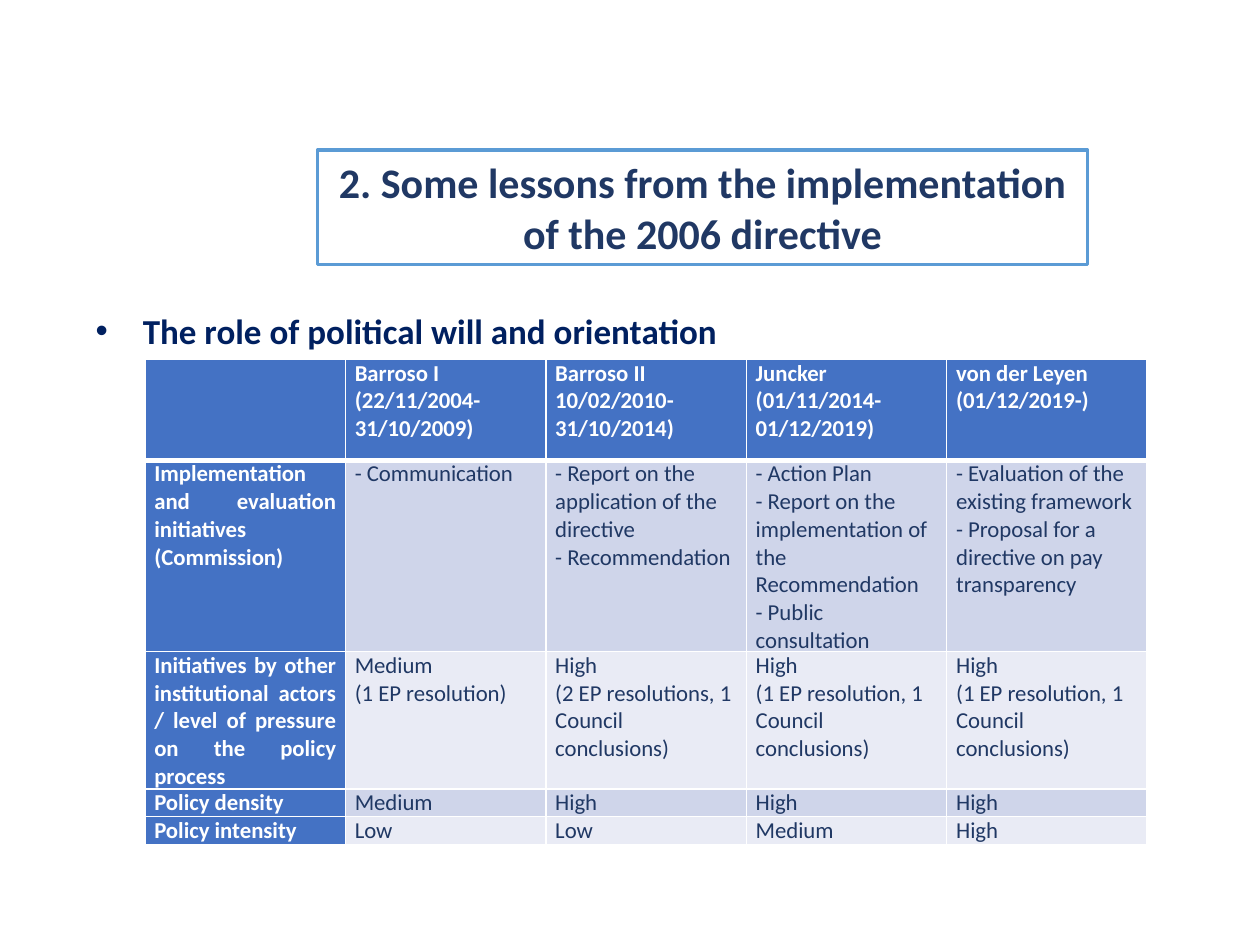
from lxml import etree
from pptx import Presentation
from pptx.dml.color import RGBColor
from pptx.enum.shapes import MSO_SHAPE
from pptx.enum.text import MSO_ANCHOR, PP_ALIGN
from pptx.oxml.ns import qn
from pptx.util import Pt

WHITE = RGBColor(0xFF, 0xFF, 0xFF)
NAVY = RGBColor(0x00, 0x20, 0x60)
INK = RGBColor(0x20, 0x38, 0x64)
FRAME = RGBColor(0x5B, 0x9B, 0xD5)
HEADING = RGBColor(0x44, 0x72, 0xC4)
BANDS = (RGBColor(0xCF, 0xD5, 0xEA), RGBColor(0xE9, 0xEB, 0xF5))

COMMISSIONS = [
    "",
    "Barroso I\n(22/11/2004-31/10/2009)",
    "Barroso II\n10/02/2010-31/10/2014)",
    "Juncker\n(01/11/2014-01/12/2019)",
    "von der Leyen\n(01/12/2019-)",
]
ONE_RESOLUTION = "High\n(1 EP resolution, 1 Council conclusions)"
ROWS = [
    COMMISSIONS,
    ["Implementation and evaluation initiatives (Commission)",
     "- Communication",
     "- Report on the application of the directive\n- Recommendation",
     "- Action Plan\n- Report on the implementation of the Recommendation\n"
     "- Public consultation",
     "- Evaluation of the existing framework\n"
     "- Proposal for a directive on pay transparency"],
    ["Initiatives by other institutional actors / level of pressure "
     "on the policy process",
     "Medium\n(1 EP resolution)",
     "High\n(2 EP resolutions, 1 Council conclusions)",
     ONE_RESOLUTION, ONE_RESOLUTION],
    ["Policy density", "Medium", "High", "High", "High"],
    ["Policy intensity", "Low", "Low", "Medium", "High"],
]
ROW_HEIGHTS = (57.6, 109.4, 78.5, 15.84, 15.84)
COLUMN_WIDTH = 114.55


class Deck:
    """Holds the text style and the slide being filled."""

    font_name = "Calibri"

    def __init__(self, slide):
        self.slide = slide

    def style(self, frame, size, color, bold, align=PP_ALIGN.LEFT):
        for paragraph in frame.paragraphs:
            paragraph.alignment = align
            font = paragraph.font
            font.name, font.size, font.bold = self.font_name, Pt(size), bold
            font.color.rgb = color

    def framed_title(self, text, left, top, width, height):
        title = self.slide.shapes.add_shape(
            MSO_SHAPE.RECTANGLE, Pt(left), Pt(top), Pt(width), Pt(height))
        title.shadow.inherit = False
        title.fill.background()
        title.line.color.rgb = FRAME
        title.line.width = Pt(2)
        frame = title.text_frame
        frame.word_wrap = True
        frame.vertical_anchor = MSO_ANCHOR.MIDDLE
        frame.text = text
        self.style(frame, 24, INK, True, PP_ALIGN.CENTER)

    def bullet(self, text, left, top, width, height, indent=27):
        frame = self.slide.shapes.add_textbox(
            Pt(left), Pt(top), Pt(width), Pt(height)).text_frame
        frame.word_wrap = True
        frame.margin_top = frame.margin_bottom = 0
        frame.text = text
        properties = frame.paragraphs[0]._p.get_or_add_pPr()
        properties.set("marL", str(Pt(indent)))
        properties.set("indent", str(-Pt(indent)))
        etree.SubElement(properties, qn("a:buFont"), typeface="Arial")
        etree.SubElement(properties, qn("a:buChar"), char="•")
        self.style(frame, 20, NAVY, True)

    def borders(self, cell, **widths):
        properties = cell._tc.get_or_add_tcPr()
        for place, side in enumerate("LRTB"):
            line = etree.Element(qn(f"a:ln{side}"),
                                 w=str(Pt(widths.get(side, 1))))
            fill = etree.SubElement(line, qn("a:solidFill"))
            etree.SubElement(fill, qn("a:srgbClr"), val=str(WHITE))
            properties.insert(place, line)

    def table(self, rows, left, top, column_width, row_heights):
        columns = len(rows[0])
        grid = self.slide.shapes.add_table(
            len(rows), columns, Pt(left), Pt(top),
            Pt(column_width * columns), Pt(sum(row_heights))).table
        for column in grid.columns:
            column.width = Pt(column_width)
        for r, (texts, height) in enumerate(zip(rows, row_heights)):
            grid.rows[r].height = Pt(height)
            for c, text in enumerate(texts):
                cell = grid.cell(r, c)
                heading = r == 0 or c == 0
                cell.margin_left = cell.margin_right = Pt(5.4)
                cell.margin_top = cell.margin_bottom = 0
                cell.fill.solid()
                cell.fill.fore_color.rgb = HEADING if heading else BANDS[(r - 1) % 2]
                cell.text_frame.text = text
                self.style(cell.text_frame, 13, WHITE if heading else INK, heading,
                           PP_ALIGN.JUSTIFY if r and c == 0 else PP_ALIGN.LEFT)
                # Thick rule under the header row
                self.borders(cell, T=3 if r == 1 else 1, B=3 if r == 0 else 1)


def main():
    presentation = Presentation()
    presentation.slide_width, presentation.slide_height = Pt(720), Pt(540)
    deck = Deck(presentation.slides.add_slide(presentation.slide_layouts[6]))

    # Topic and heading
    deck.bullet("The role of political will and orientation", 47.5, 177, 625, 25)
    deck.framed_title("2. Some lessons from the implementation of the 2006 directive",
                      181.5, 85.7, 440, 65.5)

    # Comparison of the Commissions
    deck.table(ROWS, 82.8, 205.4, COLUMN_WIDTH, ROW_HEIGHTS)

    presentation.save("out.pptx")


if __name__ == "__main__":
    main()
